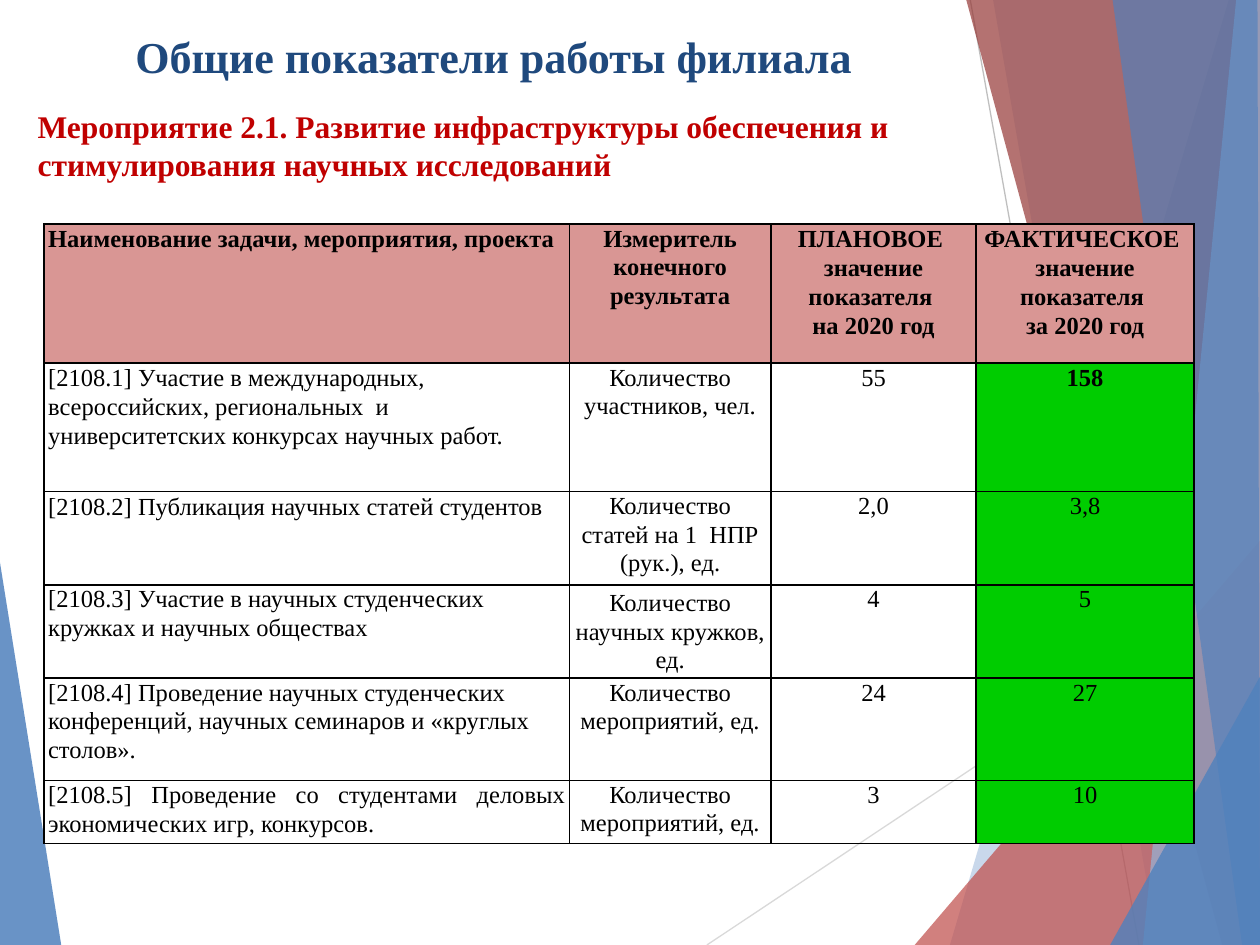
from typing import NamedTuple

from lxml.etree import SubElement
from pptx import Presentation
from pptx.dml.color import RGBColor
from pptx.enum.shapes import MSO_CONNECTOR
from pptx.enum.text import MSO_ANCHOR, PP_ALIGN
from pptx.oxml.ns import qn
from pptx.util import Cm, Pt

FONT = "Times New Roman"
BLUE, RED = "4F81BD", "C0504D"
HEADER_FILL, FACT_FILL = "D99694", "00CC00"
W, H = 25.4, 19.05
EDGE = 25.43


class Facet(NamedTuple):
    color: str
    alpha: int
    points: list


class Ray(NamedTuple):
    color: str
    start: tuple
    end: tuple


class Label(NamedTuple):
    text: str
    box: tuple
    size: float
    color: str
    align: PP_ALIGN
    anchor: MSO_ANCHOR
    right_margin: float


LEFT_FACET = Facet(BLUE, 85, [(-0.03, 11.15), (1.24, 19.08), (-0.03, H)])
RAYS = [
    Ray("D9D9D9", (14.25, H), (EDGE, 11.61)),
    Ray("BFBFBF", (19.56, 0), (22.96, H)),
]
RIGHT_FACETS = [
    Facet(BLUE, 30, [(24.77, 0), (19.15, H), (EDGE, H), (EDGE, 0)]),
    Facet(BLUE, 20, [(20.02, 0), (23.34, H), (EDGE, H), (EDGE, 0)]),
    Facet(RED, 72, [(18.44, H), (W, 10.9), (EDGE, H)]),
    Facet("953735", 70, [(19.48, 0), (24.64, H), (EDGE, H), (EDGE, 0)]),
    Facet("95B3D7", 70, [(24.92, 0), (23.04, H), (EDGE, H), (W, 0)]),
    Facet(BLUE, 65, [(22.43, 0), (25.04, H), (W, H), (25.35, 0)]),
    Facet(BLUE, 80, [(22.38, H), (EDGE, 13.59), (EDGE, H)]),
]
LABELS = [
    Label("Общие показатели работы филиала", (1.14, 0.43, 17.63, 1.4),
          25.2, "1F497D", PP_ALIGN.CENTER, MSO_ANCHOR.MIDDLE, 0.25),
    Label("Мероприятие 2.1. Развитие инфраструктуры обеспечения и "
          "стимулирования научных исследований", (0.51, 2.03, 22.61, 1.8),
          18, "C00000", PP_ALIGN.LEFT, MSO_ANCHOR.TOP, 2.5),
]
COLUMNS = [10.59, 4.06, 4.14, 4.39]
ROW_HEIGHTS = [2.8, 2.59, 1.88, 1.88, 2.06, 1.27]
ROWS = [
    ("Наименование задачи, мероприятия, проекта",
     "Измеритель конечного результата",
     "ПЛАНОВОЕ \nзначение показателя \nна 2020 год",
     "ФАКТИЧЕСКОЕ \nзначение показателя \nза 2020 год"),
    ("[2108.1] Участие в международных, всероссийских, региональных  и "
     "университетских конкурсах научных работ.",
     "Количество участников, чел.", "55", "158"),
    ("[2108.2] Публикация научных статей студентов",
     "Количество статей на 1  НПР (рук.), ед.", "2,0", "3,8"),
    ("[2108.3] Участие в научных студенческих кружках и научных обществах",
     "Количество научных кружков, ед.", "4", "5"),
    ("[2108.4] Проведение научных студенческих конференций, научных "
     "семинаров и «круглых столов».",
     "Количество мероприятий, ед.", "24", "27"),
    ("[2108.5] Проведение со студентами деловых экономических игр, конкурсов.",
     "Количество мероприятий, ед.", "3", "10"),
]


def rgb(color: str) -> RGBColor:
    return RGBColor.from_string(color)


def draw_facet(s, facet: Facet) -> None:
    points = [(Cm(x), Cm(y)) for x, y in facet.points]
    builder = s.shapes.build_freeform(*points[0])
    builder.add_line_segments(points[1:], close=True)
    sp = builder.convert_to_shape()
    sp.shadow.inherit = False
    sp.line.fill.background()
    sp.fill.solid()
    sp.fill.fore_color.rgb = rgb(facet.color)
    clr = sp._element.spPr.find(qn("a:solidFill"))[0]
    SubElement(clr, qn("a:alpha"), val=str(facet.alpha * 1000))


def draw_ray(s, ray: Ray) -> None:
    ends = [Cm(v) for v in ray.start + ray.end]
    line = s.shapes.add_connector(MSO_CONNECTOR.STRAIGHT, *ends)
    line.line.color.rgb = rgb(ray.color)
    line.line.width = Pt(0.75)
    SubElement(line._element.spPr, qn("a:effectLst"))


def format_text(tf, size: float, color: str, bold: bool, align: PP_ALIGN) -> None:
    for p in tf.paragraphs:
        p.alignment = align
        for r in p.runs:
            r.font.name = FONT
            r.font.size = Pt(size)
            r.font.bold = bold
            r.font.color.rgb = rgb(color)


def draw_label(s, label: Label) -> None:
    tf = s.shapes.add_textbox(*[Cm(v) for v in label.box]).text_frame
    tf.word_wrap = True
    tf.vertical_anchor = label.anchor
    tf.margin_right = Cm(label.right_margin)
    tf.text = label.text
    format_text(tf, label.size, label.color, True, label.align)


def add_borders(cell) -> None:
    tcPr = cell._tc.get_or_add_tcPr()
    for side in ("a:lnL", "a:lnR", "a:lnT", "a:lnB"):
        ln = SubElement(tcPr, qn(side), w=str(Pt(1)))
        fill = SubElement(ln, qn("a:solidFill"))
        SubElement(fill, qn("a:srgbClr"), val="000000")


def fill_cell(cell, text: str, row: int, col: int) -> None:
    add_borders(cell)
    if row == 0 or col == 3:
        cell.fill.solid()
        cell.fill.fore_color.rgb = rgb(FACT_FILL if row else HEADER_FILL)
    else:
        cell.fill.background()
    cell.margin_left = cell.margin_right = Cm(0.08)
    cell.margin_top = cell.margin_bottom = 0
    if (row, col) == (3, 1):
        cell.vertical_anchor = MSO_ANCHOR.MIDDLE
    align = PP_ALIGN.CENTER
    if col == 0:
        align = PP_ALIGN.JUSTIFY if row == 5 else PP_ALIGN.LEFT
    tf = cell.text_frame
    tf.text = text
    format_text(tf, 14, "000000", row == 0 or (row, col) == (1, 3), align)
    for p in tf.paragraphs:
        p.line_spacing = 1.07 if col == 0 and row not in (3, 4) else 1.05
    if row == 0 and col >= 2:
        for p in tf.paragraphs[:2]:
            p.line_spacing = 1.07


def draw_table(s) -> None:
    table = s.shapes.add_table(len(ROWS), len(COLUMNS), Cm(0.89), Cm(4.52),
                               Cm(sum(COLUMNS)), Cm(sum(ROW_HEIGHTS))).table
    table.first_row = table.horz_banding = False
    for column, width in zip(table.columns, COLUMNS):
        column.width = Cm(width)
    for i, (height, texts) in enumerate(zip(ROW_HEIGHTS, ROWS)):
        table.rows[i].height = Cm(height)
        for j, text in enumerate(texts):
            fill_cell(table.cell(i, j), text, i, j)


def main() -> None:
    prs = Presentation()
    prs.slide_width, prs.slide_height = Cm(W), Cm(H)
    s = prs.slides.add_slide(prs.slide_layouts[6])
    draw_facet(s, LEFT_FACET)
    for ray in RAYS:
        draw_ray(s, ray)
    for facet in RIGHT_FACETS:
        draw_facet(s, facet)
    for label in LABELS:
        draw_label(s, label)
    draw_table(s)
    prs.save("out.pptx")


if __name__ == "__main__":
    main()
